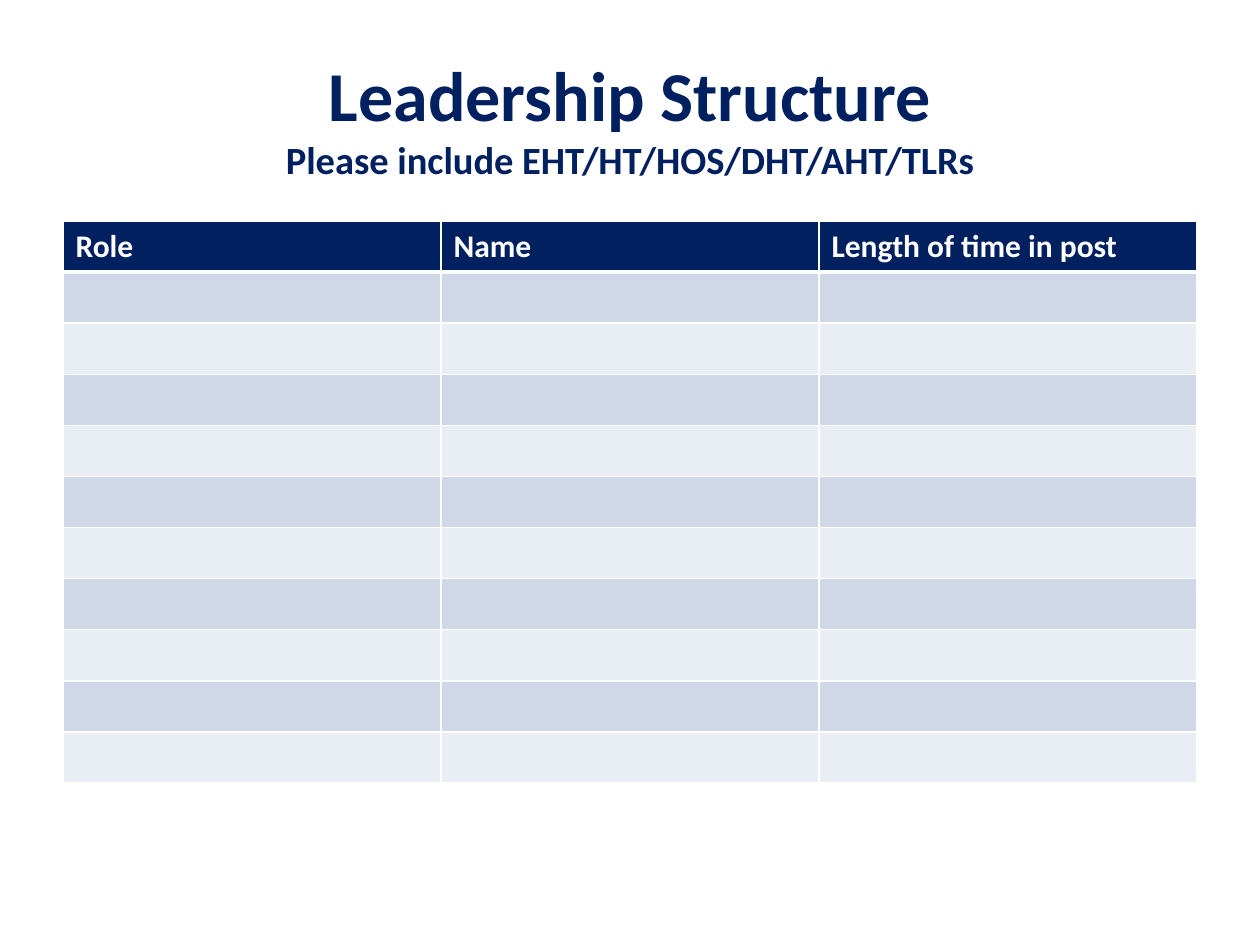
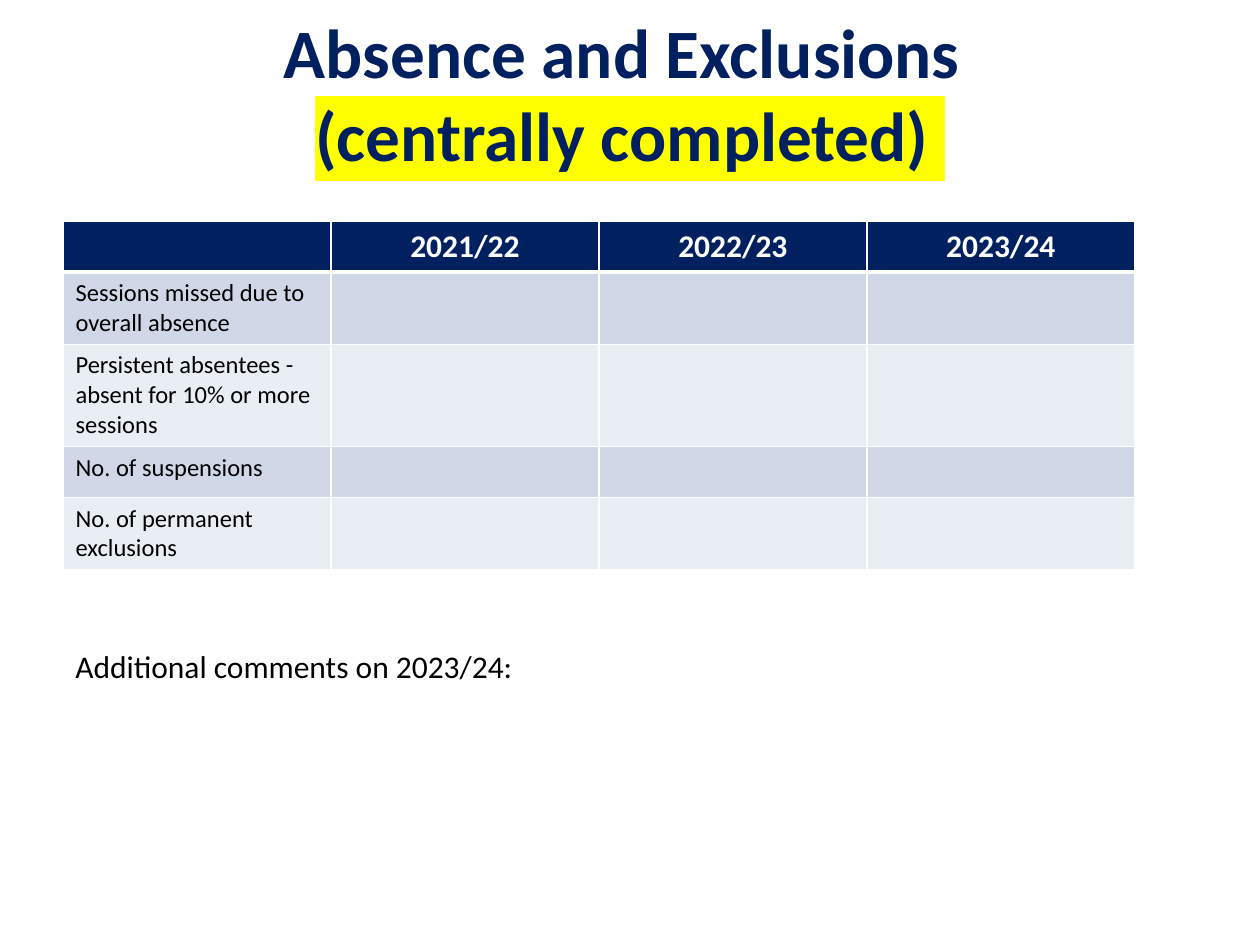
from lxml import etree
from pptx import Presentation
from pptx.dml.color import RGBColor
from pptx.enum.text import MSO_ANCHOR, MSO_AUTO_SIZE, PP_ALIGN
from pptx.oxml.ns import qn
from pptx.util import Pt

LEFT, CENTER = PP_ALIGN.LEFT, PP_ALIGN.CENTER
MIDDLE = MSO_ANCHOR.MIDDLE
NO_FIT = MSO_AUTO_SIZE.NONE
TITLE_ONLY = 5

FONT = "Calibri"
NAVY, WHITE, BLACK, YELLOW = "002060", "FFFFFF", "000000", "FFFF00"
BANDS = ("D0D8E8", "E9EDF4")
ROW_H = 51


def px(n):
    return round(n * 914400 / 126)


def rgb(value):
    return RGBColor.from_string(value)


class Deck:
    def __init__(self):
        self.prs = Presentation()
        self.prs.slide_width, self.prs.slide_height = px(1260), px(945)
        self.slide = None

    def add_slide(self):
        self.slide = self.prs.slides.add_slide(self.prs.slide_layouts[TITLE_ONLY])

    def style(self, p, size, color, bold=False, align=LEFT):
        p.alignment = align
        p.font.name, p.font.size, p.font.bold = FONT, Pt(size), bold
        p.font.color.rgb = rgb(color)

    def place(self, sp, x, y, w, h):
        sp.left, sp.top, sp.width, sp.height = px(x), px(y), px(w), px(h)

    def title(self, first, second, size, second_size=None, highlight=None, bottom=6):
        sp = self.slide.shapes.title
        self.place(sp, 63, 38, 1134, 157)
        tf = sp.text_frame
        tf.auto_size, tf.word_wrap, tf.vertical_anchor = NO_FIT, True, MIDDLE
        tf.margin_bottom = px(bottom)
        p = tf.paragraphs[0]
        self.style(p, size, NAVY, True, CENTER)
        p.add_run().text = first
        p.add_line_break()
        r = p.add_run()
        r.text = second
        if second_size:
            r.font.size = Pt(second_size)
        if highlight:
            mark = etree.SubElement(r.font._element, qn("a:highlight"))
            etree.SubElement(mark, qn("a:srgbClr"), val=highlight)

    def borders(self, cell, top, bottom):
        tc_pr = cell._tc.get_or_add_tcPr()
        widths = {"lnL": 1, "lnR": 1, "lnT": top, "lnB": bottom}
        for i, (side, width) in enumerate(widths.items()):
            ln = etree.Element(qn("a:" + side), w=str(Pt(width)))
            fill = etree.SubElement(ln, qn("a:solidFill"))
            etree.SubElement(fill, qn("a:srgbClr"), val=WHITE)
            tc_pr.insert(i, ln)

    def table(self, header, labels, col_w, heights, header_align=LEFT):
        rows = [header] + [[label] + [""] * (len(header) - 1) for label in labels]
        heights = [ROW_H] + heights
        table = self.slide.shapes.add_table(
            len(rows), len(header), px(63), px(221),
            px(col_w * len(header)), px(sum(heights))).table
        for col in table.columns:
            col.width = px(col_w)
        for i, values in enumerate(rows):
            table.rows[i].height = px(heights[i])
            for j, value in enumerate(values):
                cell = table.cell(i, j)
                cell.fill.solid()
                cell.fill.fore_color.rgb = rgb(BANDS[(i - 1) % 2] if i else NAVY)
                self.borders(cell, 3 if i == 1 else 1, 1 if i else 3)
                if value:
                    cell.text = value
                    p = cell.text_frame.paragraphs[0]
                    if i:
                        self.style(p, 14, BLACK)
                    else:
                        self.style(p, 18, WHITE, True, header_align)

    def text(self, value, x, y, w, h):
        tf = self.slide.shapes.add_textbox(px(x), px(y), px(w), px(h)).text_frame
        tf.word_wrap = True
        tf.text = value
        self.style(tf.paragraphs[0], 18, BLACK)


def main():
    deck = Deck()

    deck.add_slide()
    deck.title("Leadership Structure", "Please include EHT/HT/HOS/DHT/AHT/TLRs", 40,
               second_size=22)
    deck.table(["Role", "Name", "Length of time in post"], [""] * 10, 378, [ROW_H] * 10)

    deck.add_slide()
    deck.title("Absence and Exclusions ", "(centrally completed) ", 39.6,
               highlight=YELLOW, bottom=54)
    deck.table(["", "2021/22", "2022/23", "2023/24"],
               ["Sessions missed due to overall absence",
                "Persistent absentees - absent for 10% or more sessions",
                "No. of suspensions",
                "No. of permanent exclusions"],
               268, [72, 102, ROW_H, 72], CENTER)
    deck.text("Additional comments on 2023/24:", 63, 641, 1123, 165)

    deck.prs.save("out.pptx")


if __name__ == "__main__":
    main()
